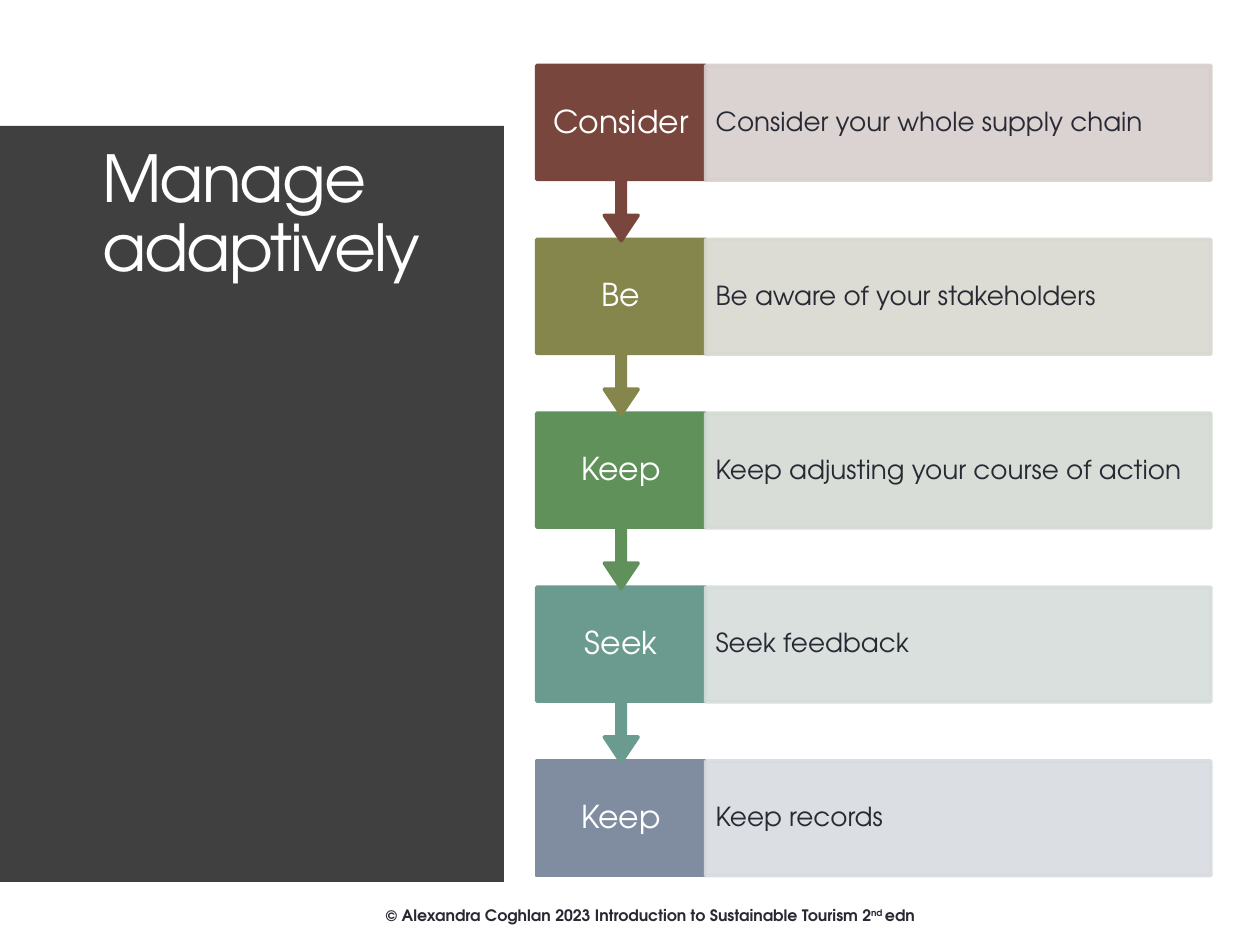
from dataclasses import dataclass

from lxml import etree
from pptx import Presentation
from pptx.dml.color import RGBColor
from pptx.enum.shapes import MSO_SHAPE
from pptx.enum.text import MSO_ANCHOR, MSO_AUTO_SIZE, PP_ALIGN
from pptx.oxml.ns import qn
from pptx.util import Inches, Pt

RECT, CALLOUT = MSO_SHAPE.RECTANGLE, MSO_SHAPE.UP_ARROW_CALLOUT
TOP, MIDDLE = MSO_ANCHOR.TOP, MSO_ANCHOR.MIDDLE
LEFT, CENTER = PP_ALIGN.LEFT, PP_ALIGN.CENTER
NO_FIT = MSO_AUTO_SIZE.NONE

FONT = "TeX Gyre Adventor"
WHITE, INK, PANEL = "FFFFFF", "292934", "404040"
START, PITCH, BOX, ARROW = 0.52, 1.38, 0.91, 1.39
TAG_X, TAG_W = 4.26, 1.34
NOTE_X, NOTE_W = TAG_X + TAG_W, 4.01
EDGE = 2.08


@dataclass
class Step:
    tag: str
    note: str
    dark: str
    pale: str


STEPS = [
    Step("Consider", "Consider your whole supply chain", "79463D", "D7CFCE"),
    Step("Be", "Be aware of your stakeholders", "85864B", "D9D9D1"),
    Step("Keep", "Keep adjusting your course of action", "61915A", "D4DBD3"),
    Step("Seek", "Seek feedback", "6B9A8E", "D5DDDB"),
    Step("Keep", "Keep records", "808DA0", "D8DBDF"),
]


def color(code: str) -> RGBColor:
    return RGBColor.from_string(code)


def paint(shape, code: str, alpha: int = 100) -> None:
    shape.shadow.inherit = False
    shape.fill.solid()
    shape.fill.fore_color.rgb = color(code)
    shape.line.color.rgb = color(code)
    shape.line.width = Pt(EDGE)
    if alpha < 100:
        for tint in shape._element.spPr.iter(qn("a:srgbClr")):
            etree.SubElement(tint, qn("a:alpha")).set("val", str(alpha * 1000))


def style(para, size: float, code: str, align=LEFT, bold: bool = False) -> None:
    para.alignment = align
    para.font.name = FONT
    para.font.size = Pt(size)
    para.font.bold = bold
    para.font.color.rgb = color(code)


def write(shape, text: str, size: float, code: str, align, pad: tuple) -> None:
    frame = shape.text_frame
    frame.word_wrap = True
    frame.vertical_anchor = MIDDLE
    frame.margin_left = frame.margin_right = Inches(pad[0])
    frame.margin_top = frame.margin_bottom = Inches(pad[1])
    para = frame.paragraphs[0]
    para.text = text
    para.line_spacing = 0.9
    style(para, size, code, align)


def box(shapes, kind, x: float, y: float, w: float, h: float):
    return shapes.add_shape(kind, Inches(x), Inches(y), Inches(w), Inches(h))


def draw_step(shapes, step: Step, row: int, last: bool) -> None:
    y = START + row * PITCH
    if last:
        block = box(shapes, RECT, TAG_X, y, TAG_W, BOX)
    else:
        block = box(shapes, CALLOUT, TAG_X, y, TAG_W, ARROW)
        block.rotation = 180
        for i, share in enumerate((0.05, 0.1, 0.15, 0.65)):
            block.adjustments[i] = share
    paint(block, step.dark)
    label = shapes.add_textbox(Inches(TAG_X), Inches(y), Inches(TAG_W), Inches(BOX))
    write(label, step.tag, 18, WHITE, CENTER, (0.09, 0.14))
    note = box(shapes, RECT, NOTE_X, y, NOTE_W, BOX)
    paint(note, step.pale, 90)
    write(note, step.note, 15, INK, LEFT, (0.08, 0.21))


def draw_panel(shapes) -> None:
    left, side, bulge, base, count = 0.4, 3.81, 0.18, 6.96, 40
    curve = []
    for i in range(count + 1):
        t = 2 * i / count - 1
        y = START + (base - START) * i / count
        curve.append((side + bulge * (1 - t * t), y))
    pen = shapes.build_freeform(left, START, scale=Inches(1))
    pen.add_line_segments(curve + [(left, base)], close=True)
    panel = pen.convert_to_shape()
    paint(panel, PANEL)
    panel.line.fill.background()


def draw_title(slide) -> None:
    title = slide.shapes.title
    slide.shapes._spTree.append(title._element)
    title.left, title.top = Inches(0.71), Inches(1.11)
    title.width, title.height = Inches(2.8), Inches(5.24)
    frame = title.text_frame
    frame.word_wrap = True
    frame.auto_size = NO_FIT
    frame.vertical_anchor = TOP
    para = frame.paragraphs[0]
    run = para.add_run()
    run.text = "Manage adaptively"
    run._r.get_or_add_rPr().set("spc", "-100")
    para.line_spacing = 0.9
    style(para, 37, WHITE)


def draw_credit(shapes) -> None:
    credit = shapes.add_textbox(Inches(2.8), Inches(7.14), Inches(4.72), Inches(0.25))
    credit.text_frame.word_wrap = True
    para = credit.text_frame.paragraphs[0]
    parts = (
        ("© Alexandra Coghlan 2023 Introduction to Sustainable Tourism 2", 0),
        ("nd ", 30),
        ("edn", 0),
    )
    for text, lift in parts:
        run = para.add_run()
        run.text = text
        if lift:
            run._r.get_or_add_rPr().set("baseline", str(lift * 1000))
    style(para, 9, INK, CENTER, True)


def main() -> None:
    deck = Presentation()
    deck.slide_width, deck.slide_height = Inches(10), Inches(7.5)
    slide = deck.slides.add_slide(deck.slide_layouts[5])
    draw_credit(slide.shapes)
    draw_panel(slide.shapes)
    draw_title(slide)
    end = len(STEPS) - 1
    for row, step in reversed(list(enumerate(STEPS))):
        draw_step(slide.shapes, step, row, row == end)
    deck.save("out.pptx")


if __name__ == "__main__":
    main()
